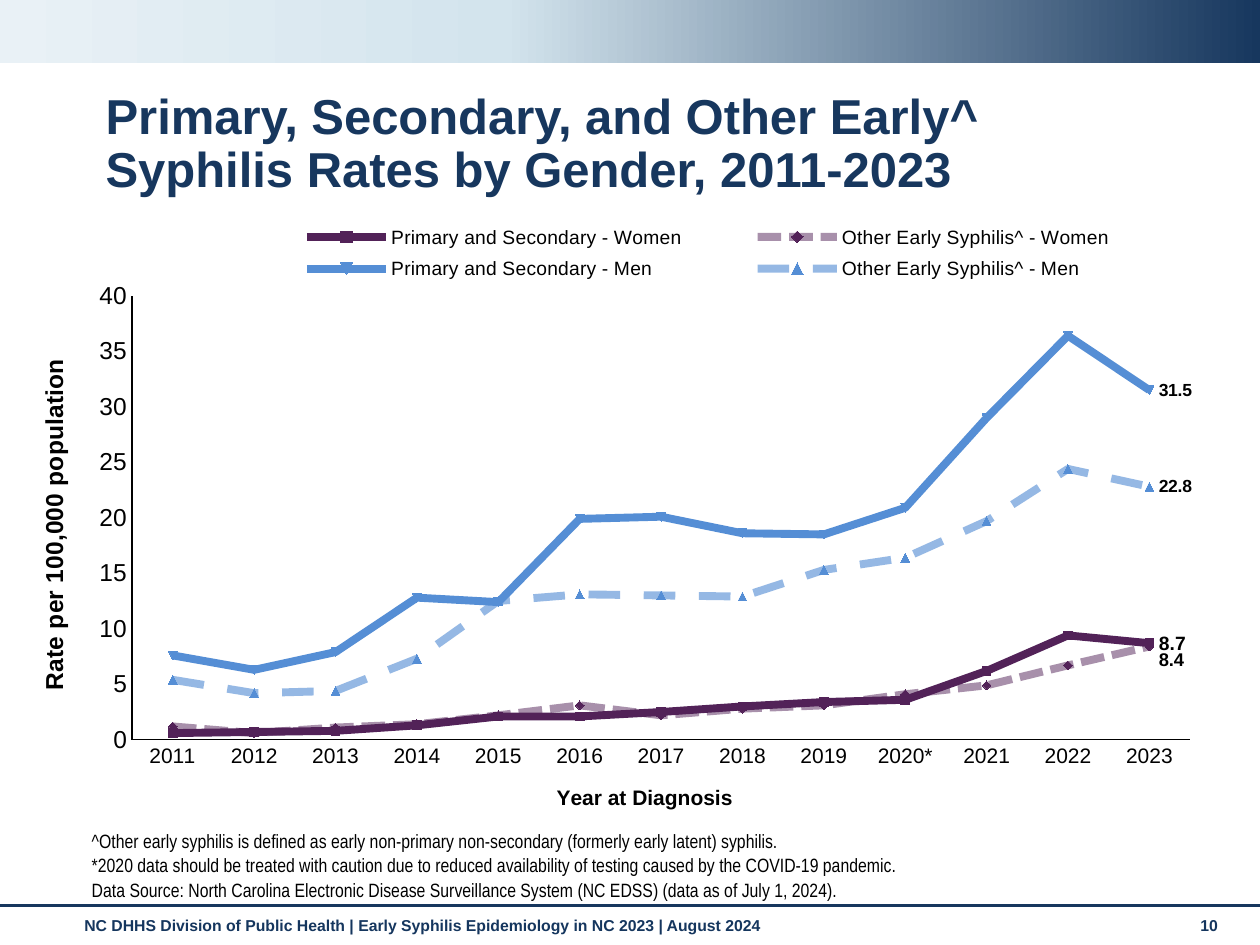
from copy import deepcopy
from lxml import etree
from pptx import Presentation
from pptx.chart.data import CategoryChartData
from pptx.dml.color import RGBColor
from pptx.enum.chart import XL_CHART_TYPE, XL_LABEL_POSITION, XL_LEGEND_POSITION, XL_TICK_MARK
from pptx.enum.dml import MSO_LINE
from pptx.enum.shapes import MSO_CONNECTOR, MSO_SHAPE
from pptx.enum.text import MSO_ANCHOR
from pptx.oxml.ns import qn
from pptx.util import Cm, Pt

LINE_CHART = XL_CHART_TYPE.LINE
LABEL_RIGHT = XL_LABEL_POSITION.RIGHT
LEGEND_TOP = XL_LEGEND_POSITION.TOP
NO_TICK = XL_TICK_MARK.NONE
SHORT_DASH = MSO_LINE.SQUARE_DOT
LONG_DASH = MSO_LINE.DASH
STRAIGHT = MSO_CONNECTOR.STRAIGHT
RECTANGLE = MSO_SHAPE.RECTANGLE
TOP = MSO_ANCHOR.TOP
BOTTOM = MSO_ANCHOR.BOTTOM

THEME = {
    "font": "Arial", "narrow": "Arial Narrow",
    "navy": "17375E", "footer": "15365E", "black": "000000",
    "women": "522258", "men": "558ED5",
    "band": [(0, "17375E"), (0.6, "D3E4ED"), (1, "E9F1F6")],
    "title_size": 28, "axis_size": 14, "category_size": 12,
    "legend_size": 11, "note_size": 11, "footer_size": 9,
}

TITLE = "Primary, Secondary, and Other Early^ Syphilis Rates by Gender, 2011-2023"
NOTES = [
    "^Other early syphilis is defined as early non-primary non-secondary (formerly early latent) syphilis.",
    "*2020 data should be treated with caution due to reduced availability of testing caused by the COVID-19 pandemic.",
    "Data Source: North Carolina Electronic Disease Surveillance System (NC EDSS) (data as of July 1, 2024).",
]
FOOTER = "NC DHHS Division of Public Health | Early Syphilis Epidemiology in NC 2023 | August 2024"
PAGE_NUMBER = "10"
YEARS = [f"{year}*" if year == 2020 else str(year) for year in range(2011, 2024)]
SERIES = [
    {"name": "Primary and Secondary - Women", "color": "women", "label_size": 11,
     "values": [0.6, 0.7, 0.8, 1.3, 2.1, 2.1, 2.5, 3, 3.4, 3.6, 6.2, 9.4, 8.7]},
    {"name": "Other Early Syphilis^ - Women", "color": "women", "label_size": 10.5,
     "dash": SHORT_DASH, "opacity": 50, "label_drop": 0.02,
     "values": [1.2, 0.6, 1.1, 1.4, 2.2, 3.1, 2.2, 2.8, 3.1, 4.1, 4.9, 6.7, 8.4]},
    {"name": "Primary and Secondary - Men", "color": "men", "label_size": 10,
     "values": [7.6, 6.3, 7.9, 12.8, 12.4, 19.9, 20.1, 18.6, 18.5, 20.9, 29, 36.4, 31.5]},
    {"name": "Other Early Syphilis^ - Men", "color": "men", "label_size": 10,
     "dash": LONG_DASH, "opacity": 62,
     "values": [5.4, 4.2, 4.4, 7.3, 12.5, 13.1, 13, 12.9, 15.3, 16.4, 19.7, 24.4, 22.8]},
]


def style_font(font, size, color="black", bold=False, name="font"):
    font.name = THEME[name]
    font.size = Pt(size)
    font.bold = bold
    font.color.rgb = RGBColor.from_string(THEME[color])


def add_text(slide, lines, box, anchor=TOP, line_spacing=None, space_before=0, **font_format):
    frame = slide.shapes.add_textbox(*map(Cm, box)).text_frame
    frame.word_wrap = True
    frame.vertical_anchor = anchor
    for index, line in enumerate(lines):
        paragraph = frame.add_paragraph() if index else frame.paragraphs[0]
        paragraph.space_before = Pt(space_before)
        if line_spacing:
            paragraph.line_spacing = line_spacing
        run = paragraph.add_run()
        run.text = line
        style_font(run.font, **font_format)


def add_band(slide, width):
    band = slide.shapes.add_shape(RECTANGLE, 0, 0, width, Cm(1.27))
    band.shadow.inherit = False
    band.line.fill.background()
    band.fill.gradient()
    band.fill.gradient_angle = 180
    stop_list = band._element.find(".//" + qn("a:gsLst"))
    stop_list.insert(1, deepcopy(stop_list[0]))
    for stop, (position, color) in zip(band.fill.gradient_stops, THEME["band"]):
        stop.position = position
        stop.color.rgb = RGBColor.from_string(color)


def add_rule(slide, width):
    rule = slide.shapes.add_connector(STRAIGHT, 0, Cm(18.26), width, Cm(18.26))
    rule.line.color.rgb = RGBColor.from_string(THEME["navy"])
    rule.line.width = Pt(1.75)
    etree.SubElement(rule._element.spPr, qn("a:effectLst"))


def set_layout(element, after=None, target=None, **measures):
    for old_layout in element.findall(qn("c:layout")):
        element.remove(old_layout)
    position = element.index(element.find(qn(after))) + 1 if after else 0
    layout = etree.Element(qn("c:layout"))
    manual = etree.SubElement(layout, qn("c:manualLayout"))
    settings = {"layoutTarget": target} if target else {}
    if target or "w" in measures:
        settings.update(xMode="edge", yMode="edge")
    settings.update(measures)
    for tag, value in settings.items():
        etree.SubElement(manual, qn(f"c:{tag}")).set("val", str(value))
    element.insert(position, layout)


def style_axis(axis, title, size):
    axis.has_major_gridlines = False
    axis.major_tick_mark = axis.minor_tick_mark = NO_TICK
    style_font(axis.tick_labels.font, size)
    axis.format.line.color.rgb = RGBColor.from_string(THEME["black"])
    axis.format.line.width = Pt(0.75)
    frame = axis.axis_title.text_frame
    frame.text = title
    style_font(frame.paragraphs[0].runs[0].font, size, bold=True)


def style_series(series, details):
    series.smooth = False
    series.marker.style = None
    line = series.format.line
    line.color.rgb = RGBColor.from_string(THEME[details["color"]])
    line.width = Pt(4.5)
    if "dash" in details:
        line.dash_style = details["dash"]
        color = series._element.find(".//" + qn("a:ln")).find(".//" + qn("a:srgbClr"))
        etree.SubElement(color, qn("a:alpha")).set("val", str(details["opacity"] * 1000))
    series.data_labels.show_value = False
    label = series.points[len(YEARS) - 1].data_label
    style_font(label.font, details["label_size"], bold=True)
    label.position = LABEL_RIGHT
    if "label_drop" in details:
        label_element = series._element.find(".//" + qn("c:dLbl"))
        set_layout(label_element, after="c:idx", x=0, y=details["label_drop"])


def add_rate_chart(slide):
    data = CategoryChartData()
    data.categories = YEARS
    for details in SERIES:
        data.add_series(details["name"], details["values"])
    box = map(Cm, (0.53, 3.96, 23.7, 13.36))
    chart = slide.shapes.add_chart(LINE_CHART, *box, data).chart
    chart.has_title = False
    style_font(chart.font, 10)
    chart.plots[0].vary_by_categories = False
    style_axis(chart.category_axis, "Year at Diagnosis", THEME["category_size"])
    style_axis(chart.value_axis, "Rate per 100,000 population", THEME["axis_size"])
    chart.value_axis.minimum_scale = 0
    chart.value_axis.maximum_scale = 40
    chart.value_axis.major_unit = 5
    chart.value_axis.tick_labels.number_format = "0"
    chart.value_axis.tick_labels.number_format_is_linked = False
    chart.has_legend = True
    chart.legend.position = LEGEND_TOP
    chart.legend.include_in_layout = False
    style_font(chart.legend.font, THEME["legend_size"])
    set_layout(chart.legend._element, after="c:legendPos", x=0.18, y=0.03, w=0.8, h=0.11)
    plot_area = chart._chartSpace.find(".//" + qn("c:plotArea"))
    set_layout(plot_area, target="inner", x=0.09, y=0.15, w=0.9, h=0.67)
    for series, details in zip(chart.plots[0].series, SERIES):
        style_series(series, details)


def main():
    presentation = Presentation()
    presentation.slide_width = Cm(25.4)
    presentation.slide_height = Cm(19.05)
    slide = presentation.slides.add_slide(presentation.slide_layouts[6])
    footer_format = {"size": THEME["footer_size"], "color": "footer", "bold": True}
    add_text(slide, [FOOTER], (1.45, 18.34, 22.2, 0.74), **footer_format)
    add_text(slide, [PAGE_NUMBER], (23.95, 18.34, 1.12, 0.76), **footer_format)
    add_band(slide, presentation.slide_width)
    add_rule(slide, presentation.slide_width)
    add_text(slide, [TITLE], (1.88, 1.73, 21.79, 1.52), line_spacing=0.9,
             size=THEME["title_size"], color="navy", bold=True)
    add_rate_chart(slide)
    add_text(slide, NOTES, (1.6, 16.92, 22.2, 1.37), anchor=BOTTOM, space_before=0.7,
             size=THEME["note_size"], name="narrow")
    presentation.save("out.pptx")


if __name__ == "__main__":
    main()
